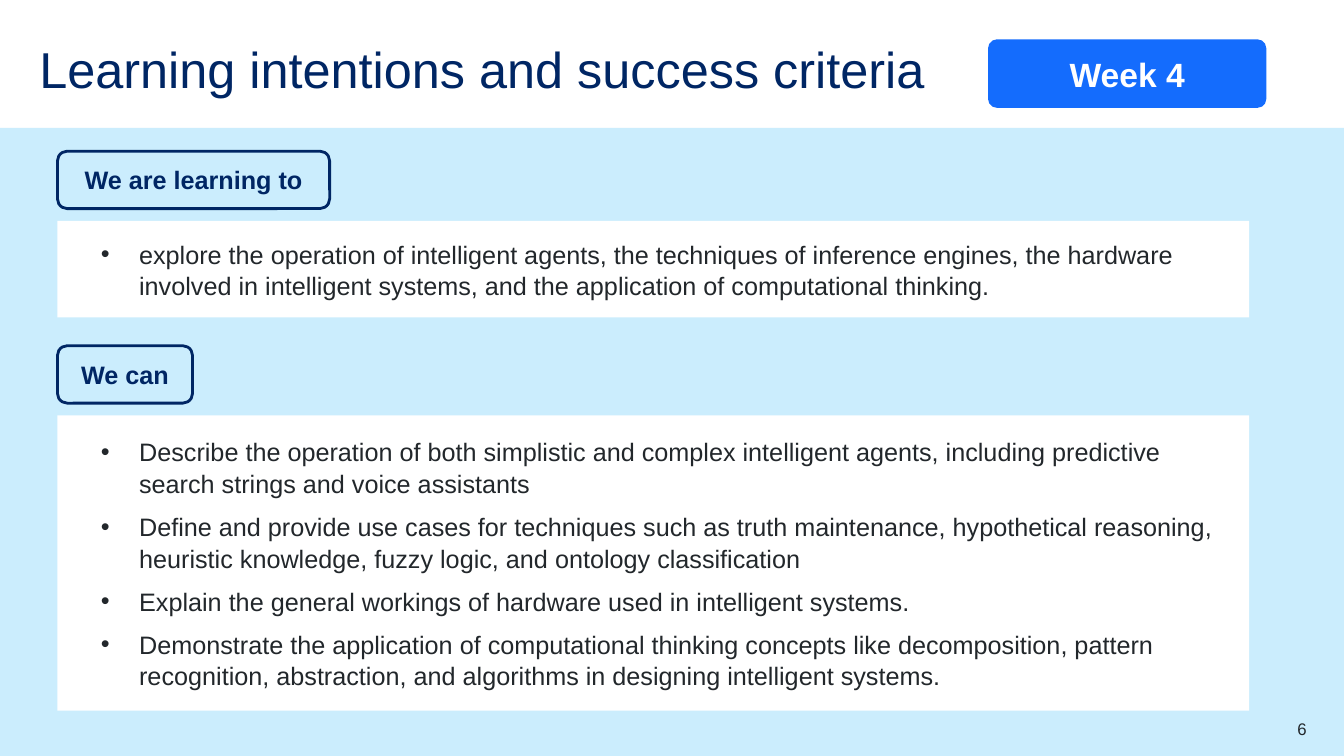
import dataclasses

import pptx
import pptx.dml.color
import pptx.enum.shapes
import pptx.enum.text
import pptx.util
from lxml import etree

Inches = pptx.util.Inches
Pt = pptx.util.Pt
ALIGN = pptx.enum.text.PP_ALIGN
ANCHOR = pptx.enum.text.MSO_ANCHOR
SHAPE = pptx.enum.shapes.MSO_SHAPE


@dataclasses.dataclass(frozen=True)
class Theme:
    font: str = "Arial"
    navy: str = "002664"
    blue: str = "146CFD"
    sky: str = "CBEDFD"
    white: str = "FFFFFF"
    ink: str = "22272B"
    title: int = 36
    badge: int = 24
    body: int = 18
    small: int = 12


THEME = Theme()
LEFT = 0.57

AIMS = [
    "explore the operation of intelligent agents, the techniques of inference engines, "
    "the hardware involved in intelligent systems, and the application of computational thinking.",
]
GOALS = [
    "Describe the operation of both simplistic and complex intelligent agents, "
    "including predictive search strings and voice assistants",
    "Define and provide use cases for techniques such as truth maintenance, "
    "hypothetical reasoning, heuristic knowledge, fuzzy logic, and ontology classification",
    "Explain the general workings of hardware used in intelligent systems.",
    "Demonstrate the application of computational thinking concepts like decomposition, "
    "pattern recognition, abstraction, and algorithms in designing intelligent systems.",
]


def rgb(code):
    return pptx.dml.color.RGBColor.from_string(code)


def place(shape, box):
    shape.left, shape.top, shape.width, shape.height = map(Inches, box)


def write(para, text, size=THEME.body, color=THEME.ink, bold=False,
          align=ALIGN.LEFT, lines=1.0, after=0):
    para.alignment = align
    para.line_spacing = lines
    para.space_before, para.space_after = Pt(0), Pt(after)
    run = para.add_run()
    run.text = text
    run.font.name, run.font.size, run.font.bold = THEME.font, Pt(size), bold
    run.font.color.rgb = rgb(color)


def setup(frame, insets=(0, 0, 0, 0), anchor=ANCHOR.TOP):
    """Set wrapping, anchor and the left, top, right and bottom insets."""
    frame.word_wrap = True
    frame.auto_size = pptx.enum.text.MSO_AUTO_SIZE.NONE
    frame.vertical_anchor = anchor
    (frame.margin_left, frame.margin_top,
     frame.margin_right, frame.margin_bottom) = map(Inches, insets)


def add_block(slide, kind, box, fill=None, line=None):
    shape = slide.shapes.add_shape(kind, *map(Inches, box))
    shape.shadow.inherit = False
    if fill:
        shape.fill.solid()
        shape.fill.fore_color.rgb = rgb(fill)
    else:
        shape.fill.background()
    if line:
        shape.line.color.rgb = rgb(line)
        shape.line.width = Pt(2)
    else:
        shape.line.fill.background()
    return shape


def add_label(slide, text, box, round_by, fill=None, line=None, **style):
    shape = add_block(slide, SHAPE.ROUNDED_RECTANGLE, box, fill, line)
    shape.adjustments[0] = round_by
    setup(shape.text_frame, (0, 0.05, 0, 0.05), ANCHOR.MIDDLE)
    write(shape.text_frame.paragraphs[0], text, bold=True, align=ALIGN.CENTER, **style)


def add_bullet(para):
    props = para._p.get_or_add_pPr()
    props.set("marL", str(Inches(0.38)))
    props.set("indent", str(Inches(-0.38)))
    mark = etree.SubElement(props, pptx.oxml.ns.qn("a:buChar"))
    mark.set("char", "•")


def fill_list(holder, items, top, height):
    place(holder, (LEFT, top, 11.82, height))
    holder.fill.solid()
    holder.fill.fore_color.rgb = rgb(THEME.white)
    frame = holder.text_frame
    setup(frame, (0.43, 0.05, 0.1, 0.05), ANCHOR.MIDDLE)
    for i, item in enumerate(items):
        para = frame.add_paragraph() if i else frame.paragraphs[0]
        after = 8 if i < len(items) - 1 else 0
        write(para, item, lines=1.05, after=after)
        add_bullet(para)


def add_section(slide, holder, name, width, top, items, height):
    """Put an outlined heading above its white list panel."""
    add_label(slide, name, (LEFT, top, width, 0.57), 0.17,
              line=THEME.navy, color=THEME.navy)
    fill_list(holder, items, top + 0.69, height)


def main():
    deck = pptx.Presentation()
    deck.slide_width, deck.slide_height = Inches(13.33), Inches(7.5)
    slide = deck.slides.add_slide(deck.slide_layouts[3])
    title, first, second = slide.placeholders

    band = add_block(slide, SHAPE.RECTANGLE, (0, 1.27, 13.33, 6.23), THEME.sky)
    slide.shapes._spTree.insert(2, band._element)

    place(title, (0.39, 0.45, 9.2, 0.57))
    setup(title.text_frame)
    write(title.text_frame.paragraphs[0], "Learning intentions and success criteria",
          size=THEME.title, color=THEME.navy, lines=0.9)
    add_label(slide, "Week 4", (9.8, 0.39, 2.76, 0.68), 0.13, fill=THEME.blue,
              size=THEME.badge, color=THEME.white)

    add_section(slide, first, "We are learning to", 2.7, 1.5, AIMS, 0.96)
    add_section(slide, second, "We can", 1.34, 3.43, GOALS, 2.93)

    page = slide.shapes.add_textbox(*map(Inches, (12.17, 7.13, 0.79, 0.2)))
    setup(page.text_frame)
    write(page.text_frame.paragraphs[0], "6", size=THEME.small, align=ALIGN.RIGHT)
    deck.save("out.pptx")


if __name__ == "__main__":
    main()
